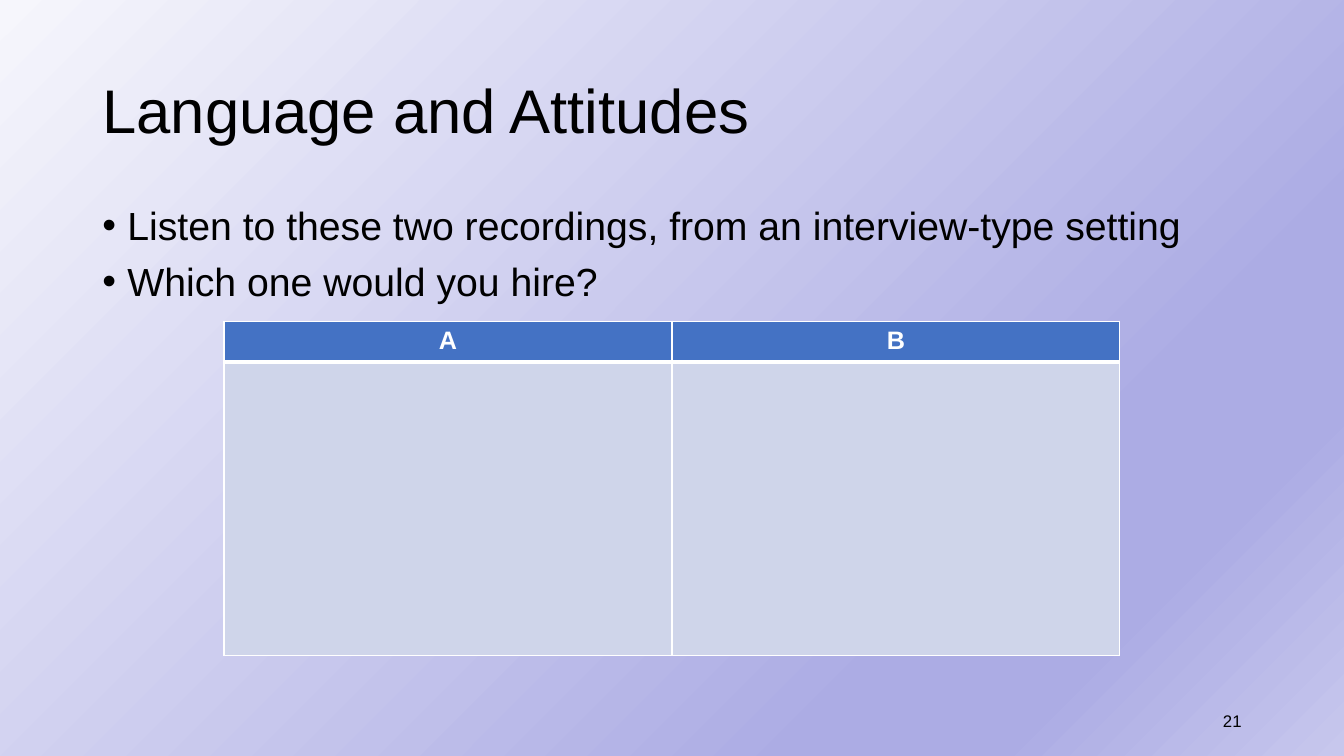
from dataclasses import dataclass

from lxml import etree
from pptx import Presentation
from pptx.dml.color import RGBColor
from pptx.enum.text import MSO_ANCHOR, PP_ALIGN
from pptx.oxml.ns import qn
from pptx.util import Pt

LEFT, CENTER, RIGHT = PP_ALIGN.LEFT, PP_ALIGN.CENTER, PP_ALIGN.RIGHT
TOP, MIDDLE = MSO_ANCHOR.TOP, MSO_ANCHOR.MIDDLE


@dataclass(frozen=True)
class Theme:
    font: str = "Arial"
    text: str = "000000"
    header_text: str = "FFFFFF"
    header_fill: str = "4472C4"
    body_fill: str = "CFD5EA"
    border: str = "FFFFFF"
    background: tuple = ((0, "F6F6FC"), (74, "ACACE4"), (83, "ACACE4"), (100, "C7C7ED"))
    background_angle: int = 45
    title_size: int = 44
    bullet_size: int = 28
    table_size: int = 18
    number_size: int = 12


THEME = Theme()


def write_text(frame, lines, size, color=THEME.text, bold=False, align=LEFT,
               line_spacing=1.0, space_before=0, bullet_indent=0):
    """Fill a text frame, one paragraph per line; an indent adds bullets."""
    for index, line in enumerate(lines):
        paragraph = frame.add_paragraph() if index else frame.paragraphs[0]
        paragraph.alignment = align
        paragraph.line_spacing = line_spacing
        paragraph.space_before = Pt(space_before)
        if bullet_indent:
            properties = paragraph._p.get_or_add_pPr()
            properties.set("marL", str(Pt(bullet_indent)))
            properties.set("indent", str(-Pt(bullet_indent)))
            etree.SubElement(properties, qn("a:buFont"), typeface=THEME.font)
            etree.SubElement(properties, qn("a:buChar"), char="•")
        run = paragraph.add_run()
        run.text = line
        run.font.name = THEME.font
        run.font.size = Pt(size)
        run.font.bold = bold
        run.font.color.rgb = RGBColor.from_string(color)


def add_text(slide, box, lines, anchor=TOP, **text_format):
    frame = slide.shapes.add_textbox(*map(Pt, box)).text_frame
    frame.word_wrap = True
    frame.vertical_anchor = anchor
    write_text(frame, lines, **text_format)


def paint_background(slide):
    slide.background.fill.gradient()
    gradient = slide.element.find(".//" + qn("a:gradFill"))
    stops = gradient.find(qn("a:gsLst"))
    for stop in list(stops):
        stops.remove(stop)
    for position, color in THEME.background:
        stop = etree.SubElement(stops, qn("a:gs"), pos=str(position * 1000))
        etree.SubElement(stop, qn("a:srgbClr"), val=color)
    line = gradient.find(qn("a:lin"))
    line.set("ang", str(THEME.background_angle * 60000))
    line.set("scaled", "0")


def set_borders(cell, **widths):
    """Draw cell borders; the side letters must come in the order L, R, T, B."""
    properties = cell._tc.get_or_add_tcPr()
    for index, (side, width) in enumerate(widths.items()):
        border = etree.Element(qn("a:ln" + side), w=str(Pt(width)))
        fill = etree.SubElement(border, qn("a:solidFill"))
        etree.SubElement(fill, qn("a:srgbClr"), val=THEME.border)
        properties.insert(index, border)


def add_comparison_table(slide, box, headings, header_height):
    left, top, width, height = box
    table = slide.shapes.add_table(2, len(headings), *map(Pt, box)).table
    table.rows[0].height = Pt(header_height)
    table.rows[1].height = Pt(height - header_height)
    for index, heading in enumerate(headings):
        table.columns[index].width = Pt(width / len(headings))
        header, body = table.cell(0, index), table.cell(1, index)
        for cell, color in ((header, THEME.header_fill), (body, THEME.body_fill)):
            cell.fill.solid()
            cell.fill.fore_color.rgb = RGBColor.from_string(color)
        set_borders(header, L=1, R=1, T=1, B=3)
        set_borders(body, L=1, R=1, T=3, B=1)
        write_text(header.text_frame, [heading], size=THEME.table_size,
                   color=THEME.header_text, bold=True, align=CENTER)


def build_question_slide(slide, box, title, bullets, headings, number):
    left, top, width, height = box
    margin = 66
    content_width = width - 2 * margin
    table_width = 640
    paint_background(slide)
    add_text(slide, (left + margin, top + 28.75, content_width, 104.4), [title],
             anchor=MIDDLE, size=THEME.title_size, line_spacing=0.9)
    add_text(slide, (left + margin, top + 143.75, content_width, 86), bullets,
             size=THEME.bullet_size, line_spacing=0.9, space_before=10,
             bullet_indent=18)
    add_comparison_table(
        slide, (left + (width - table_width) / 2, top + 229.5, table_width, 238.5),
        headings, header_height=29.2)
    add_text(slide, (left + width - margin - 216, top + height - 39.5, 216, 28.75),
             [number], anchor=MIDDLE, size=THEME.number_size, align=RIGHT)


def main():
    presentation = Presentation()
    presentation.slide_width, presentation.slide_height = Pt(960), Pt(540)
    slide = presentation.slides.add_slide(presentation.slide_layouts[6])
    build_question_slide(
        slide, (0, 0, 960, 540),
        title="Language and Attitudes",
        bullets=["Listen to these two recordings, from an interview-type setting",
                 "Which one would you hire?"],
        headings=["A", "B"],
        number="21")
    presentation.save("out.pptx")


if __name__ == "__main__":
    main()
